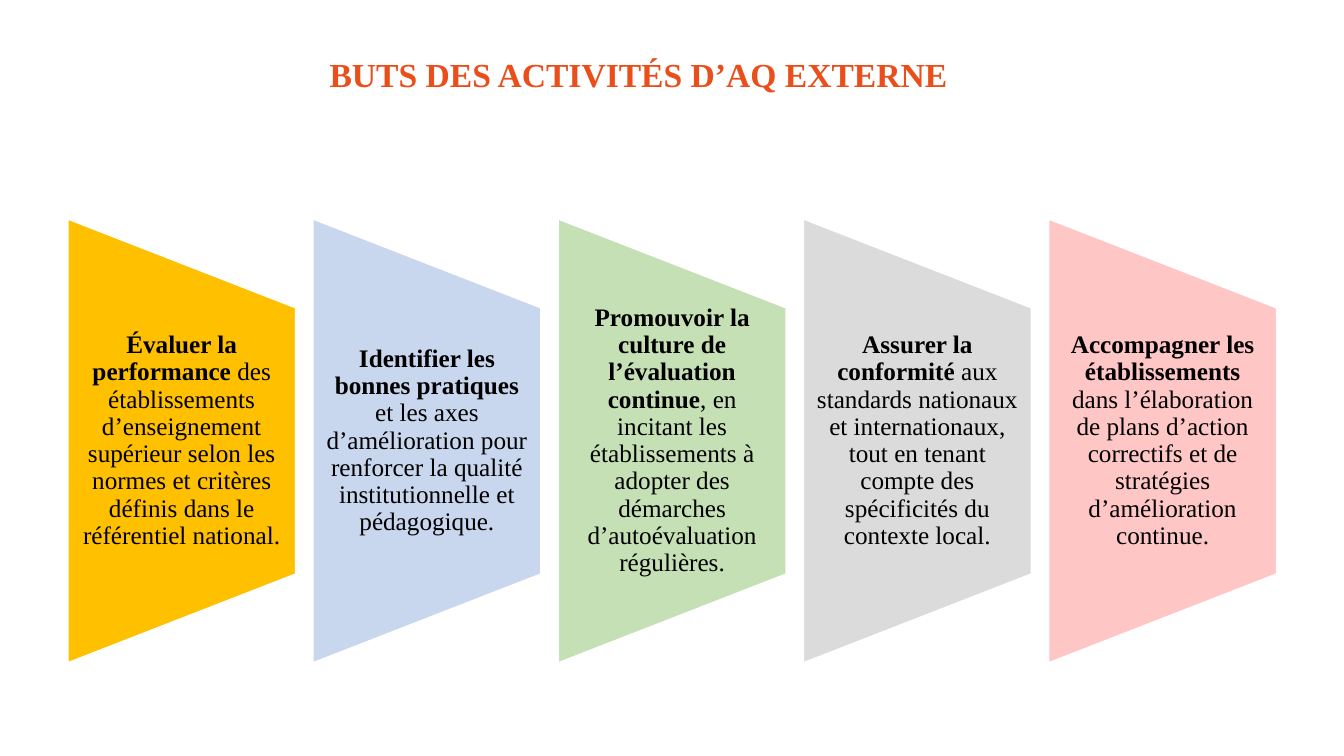
import dataclasses

import pptx
import pptx.dml.color
import pptx.enum.shapes
import pptx.enum.text
import pptx.util

Cm = pptx.util.Cm
Pt = pptx.util.Pt
RGB = pptx.dml.color.RGBColor.from_string
ALIGN = pptx.enum.text.PP_ALIGN
ANCHOR = pptx.enum.text.MSO_ANCHOR


@dataclasses.dataclass(frozen=True)
class Theme:
    font: str = "Times New Roman"
    title_size: int = 24
    body_size: int = 18
    title_from: str = "E94E1B"
    title_to: str = "F9B233"
    text: str = "000000"
    edge: str = "FFFFFF"
    panels: tuple = ("FFC000", "C8D6EE", "C5E0B4", "DBDBDB", "FFC6C6")


THEME = Theme()

TITLE = "BUTS DES ACTIVITÉS D’AQ EXTERNE"
# Each goal: bold opening, then the rest of the sentence
GOALS = [
    ("Évaluer la performance",
     " des établissements d’enseignement supérieur selon les normes et "
     "critères définis dans le référentiel national."),
    ("Identifier les bonnes pratiques",
     " et les axes d’amélioration pour renforcer la qualité "
     "institutionnelle et pédagogique."),
    ("Promouvoir la culture de l’évaluation continue",
     ", en incitant les établissements à adopter des démarches "
     "d’autoévaluation régulières."),
    ("Assurer la conformité",
     " aux standards nationaux et internationaux, tout en tenant compte "
     "des spécificités du contexte local."),
    ("Accompagner les établissements",
     " dans l’élaboration de plans d’action correctifs et de stratégies "
     "d’amélioration continue."),
]


def add_title(s, left, top, width, height):
    sp = s.shapes.title
    sp.left, sp.top, sp.width, sp.height = left, top, width, height
    tf = sp.text_frame
    tf.auto_size = pptx.enum.text.MSO_AUTO_SIZE.NONE
    tf.vertical_anchor = ANCHOR.MIDDLE
    p = tf.paragraphs[0]
    p.alignment = ALIGN.LEFT
    p.line_spacing = 0.9
    r = p.add_run()
    r.text = TITLE
    p.font.name = THEME.font
    p.font.size = Pt(THEME.title_size)
    p.font.bold = True
    # Gradient lettering
    fill = r.font.fill
    fill.gradient()
    fill.gradient_angle = 340
    for stop, color in zip(fill.gradient_stops,
                           (THEME.title_from, THEME.title_to)):
        stop.color.rgb = RGB(color)


def add_panel(s, left, top, width, height, color, goal):
    # Trapezoid turned a quarter left, so its box has swapped sides
    shift = (height - width) // 2
    sp = s.shapes.add_shape(
        pptx.enum.shapes.MSO_SHAPE.FLOWCHART_MANUAL_OPERATION,
        left - shift, top + shift, height, width)
    sp.rotation = 270
    sp.shadow.inherit = False
    sp.fill.solid()
    sp.fill.fore_color.rgb = RGB(color)
    sp.line.color.rgb = RGB(THEME.edge)
    sp.line.width = Pt(1)

    # Upright text over the middle three fifths
    tb = s.shapes.add_textbox(left, top + height // 5, width, height * 3 // 5)
    tf = tb.text_frame
    tf.word_wrap = True
    tf.vertical_anchor = ANCHOR.MIDDLE
    tf.margin_left = tf.margin_right = Cm(0.3)
    tf.margin_top = tf.margin_bottom = 0
    p = tf.paragraphs[0]
    p.alignment = ALIGN.CENTER
    p.line_spacing = 0.9
    p.font.name = THEME.font
    p.font.size = Pt(THEME.body_size)
    p.font.color.rgb = RGB(THEME.text)
    for text, bold in zip(goal, (True, False)):
        r = p.add_run()
        r.text = text
        r.font.bold = bold


def add_goals(s, left, top, width, height):
    gap = Cm(0.44)
    panel_width = (width - gap * (len(GOALS) - 1)) // len(GOALS)
    for i, (color, goal) in enumerate(zip(THEME.panels, GOALS)):
        add_panel(s, left + i * (panel_width + gap), top,
                  panel_width, height, color, goal)


def main():
    prs = pptx.Presentation()
    prs.slide_width, prs.slide_height = Cm(33.87), Cm(19.05)
    s = prs.slides.add_slide(prs.slide_layouts[5])
    add_title(s, Cm(8.05), Cm(-1.68), Cm(17.73), Cm(7.21))
    add_goals(s, Cm(1.71), Cm(5.52), Cm(30.46), Cm(11.18))
    prs.save("out.pptx")


if __name__ == "__main__":
    main()
